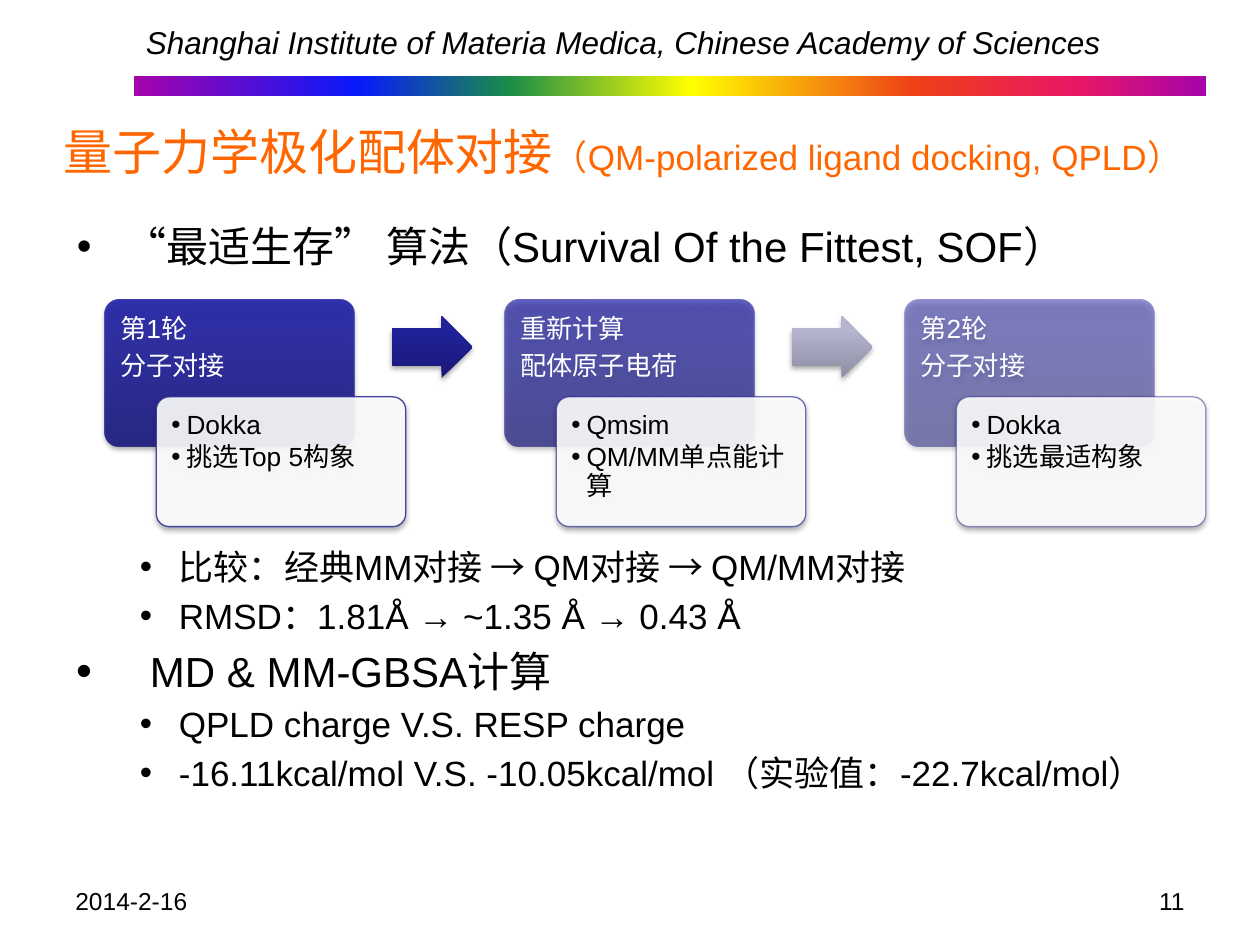
import pptx
import pptx.util
import pptx.dml.color
import pptx.enum.shapes
import pptx.enum.text
import pptx.oxml
import pptx.oxml.ns
from pptx.util import Inches, Pt

FONT = "Arial"
COLORS = {"title": "FF6600", "text": "000000", "light": "FFFFFF", "card_line": "333399"}
RAINBOW = [(0, "A603AB"), (21, "0819FB"), (35, "1A8D48"), (52, "FFFF00"),
           (73, "EE3F17"), (88, "E81766"), (100, "A603AB")]
STEP_STOPS = [(0, "1B1B7E"), (80, "2323A3"), (100, "2020A6")]

HEADER = "Shanghai Institute of Materia Medica, Chinese Academy of Sciences"
TITLE = [("量子力学极化配体对接", 28), ("（QM-polarized ligand docking, QPLD）", 20)]
# level, text, space before (pt), text indent (in); the large space holds the diagram
BODY = [
    (0, "“最适生存” 算法（Survival Of the Fittest, SOF）", 0, 0.38),
    (1, "比较：经典MM对接 → QM对接 → QM/MM对接", 157, 0.81),
    (1, "RMSD：1.81Å → ~1.35 Å → 0.43 Å", 4, 0.81),
    (0, "MD & MM-GBSA计算", 5, 0.58),
    (1, "QPLD charge V.S. RESP charge", 4, 0.81),
    (1, "-16.11kcal/mol V.S. -10.05kcal/mol （实验值：-22.7kcal/mol）", 4, 0.81),
]
BODY_SIZES = [24, 20]
BULLET_LEFT = [0, 0.5]
# heading lines, card items, opacity in percent
STEPS = [
    (["第1轮", "分子对接"], ["Dokka", "挑选Top 5构象"], 90),
    (["重新计算", "配体原子电荷"], ["Qmsim", "QM/MM单点能计算"], 70),
    (["第2轮", "分子对接"], ["Dokka", "挑选最适构象"], 50),
]
ARROWS = [
    [(0, "191978"), (80, "21219C"), (100, "1F1F9F")],
    [(0, "8C8CA1"), (80, "B6B6D1"), (100, "B6B6D2")],
]
STEP_LEFT, STEP_TOP, STEP_PITCH = 0.83, 2.38, 3.175
FOOTER = [("2014-2-16", 0.5, "LEFT"), ("11", 7.17, "RIGHT")]

SHAPE = pptx.enum.shapes.MSO_SHAPE
ALIGN = pptx.enum.text.PP_ALIGN
ANCHOR = pptx.enum.text.MSO_ANCHOR
qn = pptx.oxml.ns.qn


def xml(text):
    return pptx.oxml.parse_xml(text.replace(">", f' {pptx.oxml.ns.nsdecls("a")}>', 1)
                               if not text.endswith("/>") or text.count("<") > 1
                               else text[:-2] + f' {pptx.oxml.ns.nsdecls("a")}/>')


def rgb(name):
    return pptx.dml.color.RGBColor.from_string(COLORS[name])


def style(run, size, color, italic=None):
    f = run.font
    f.name, f.size, f.italic = FONT, Pt(size), italic
    f.color.rgb = rgb(color)


def gradient(sp, stops, angle, opacity=100):
    sp.fill.background()
    spPr = sp._element.spPr
    gs = "".join(f'<a:gs pos="{pos * 1000}"><a:srgbClr val="{c}">'
                 f'<a:alpha val="{opacity * 1000}"/></a:srgbClr></a:gs>' for pos, c in stops)
    fill = xml(f'<a:gradFill rotWithShape="1"><a:gsLst>{gs}</a:gsLst>'
               f'<a:lin ang="{angle * 60000}" scaled="0"/></a:gradFill>')
    spPr.replace(spPr.find(qn("a:noFill")), fill)


def set_alpha(parent, opacity):
    for color in parent.iter(qn("a:srgbClr")):
        color.append(xml(f'<a:alpha val="{opacity * 1000}"/>'))


def add_shape(s, kind, box, adjustments=(), shadow=True):
    sp = s.shapes.add_shape(kind, *map(Inches, box))
    for i, value in enumerate(adjustments):
        sp.adjustments[i] = value
    sp.line.fill.background()
    sp.shadow.inherit = False
    if shadow:
        sp._element.spPr.find(qn("a:effectLst")).append(xml(
            f'<a:outerShdw blurRad="{Pt(3.1)}" dist="{Pt(1.8)}" dir="5400000" rotWithShape="0">'
            '<a:srgbClr val="000000"><a:alpha val="35000"/></a:srgbClr></a:outerShdw>'))
    return sp


def bullet(p, indent, hanging, percent=100):
    pPr = p._p.get_or_add_pPr()
    pPr.set("marL", str(Inches(indent)))
    pPr.set("indent", str(-Inches(hanging)))
    pPr.append(xml(f'<a:buSzPct val="{percent * 1000}"/>'))
    pPr.append(xml('<a:buFont typeface="Arial"/>'))
    pPr.append(xml('<a:buChar char="•"/>'))


def fill_box(sp, lines, color, after, bulleted=False):
    tf = sp.text_frame
    tf.word_wrap = True
    tf.vertical_anchor = ANCHOR.TOP
    tf.margin_left = tf.margin_right = tf.margin_top = tf.margin_bottom = Inches(0.09)
    tf.text = "\n".join(lines)
    for p in tf.paragraphs:
        p.alignment = ALIGN.LEFT
        p.line_spacing = 0.9
        p.space_after = Pt(after)
        if bulleted:
            bullet(p, 0.12, 0.12)
        style(p.runs[0], 15, color)


def add_label(s, text, box, size, align="LEFT", italic=None, wrap=True):
    tf = s.shapes.add_textbox(*map(Inches, box)).text_frame
    tf.word_wrap = wrap
    tf.text = text
    p = tf.paragraphs[0]
    p.alignment = ALIGN[align]
    style(p.runs[0], size, "text", italic)


def place(sp, box):
    sp.left, sp.top, sp.width, sp.height = map(Inches, box)
    sp.text_frame.auto_size = pptx.enum.text.MSO_AUTO_SIZE.NONE
    return sp.text_frame


def add_step(s, i, heading, items, opacity):
    left = STEP_LEFT + i * STEP_PITCH
    sp = add_shape(s, SHAPE.ROUNDED_RECTANGLE, (left, STEP_TOP, 1.98, 1.16), [0.1])
    gradient(sp, STEP_STOPS, 270, opacity)
    fill_box(sp, heading, "light", 5.25)

    card = add_shape(s, SHAPE.ROUNDED_RECTANGLE, (left + 0.41, STEP_TOP + 0.77, 1.98, 1.03), [0.1])
    card.fill.solid()
    card.fill.fore_color.rgb = rgb("light")
    set_alpha(card._element.spPr.find(qn("a:solidFill")), 90)
    card.line.color.rgb = rgb("card_line")
    card.line.width = Pt(0.75)
    set_alpha(card._element.spPr.find(qn("a:ln")), opacity)
    fill_box(card, items, "text", 2.25, bulleted=True)

    if i < len(ARROWS):
        arrow = add_shape(s, SHAPE.RIGHT_ARROW, (left + 2.28, STEP_TOP + 0.13, 0.64, 0.49), [0.6, 0.5])
        gradient(arrow, ARROWS[i], 270)


def main():
    prs = pptx.Presentation()
    prs.slide_width, prs.slide_height = Inches(10), Inches(7.5)
    s = prs.slides.add_slide(prs.slide_layouts[1])

    bar = add_shape(s, SHAPE.RECTANGLE, (1.06, 0.6, 8.51, 0.16), shadow=False)
    gradient(bar, RAINBOW, 0)
    add_label(s, HEADER, (1.06, 0.13, 7.78, 0.4), 18, italic=True, wrap=False)

    tf = place(s.shapes.title, (0.25, 0.84, 9.39, 0.71))
    tf.vertical_anchor = ANCHOR.MIDDLE
    p = tf.paragraphs[0]
    p.alignment = ALIGN.CENTER
    for text, size in TITLE:
        r = p.add_run()
        r.text = text
        style(r, size, "title")

    tf = place(s.placeholders[1], (0.51, 1.7, 8.98, 4.96))
    tf.text = "\n".join(text for _, text, _, _ in BODY)
    for p, (level, _, before, indent) in zip(tf.paragraphs, BODY):
        p.level = level
        p.space_before = Pt(before)
        bullet(p, indent, indent - BULLET_LEFT[level], 108 if indent == 0.58 else 100)
        style(p.runs[0], BODY_SIZES[level], "text")

    for i, step in enumerate(STEPS):
        add_step(s, i, *step)
    for text, left, align in FOOTER:
        add_label(s, text, (left, 6.98, 2.33, 0.37), 14, align)
    prs.save("out.pptx")


if __name__ == "__main__":
    main()
